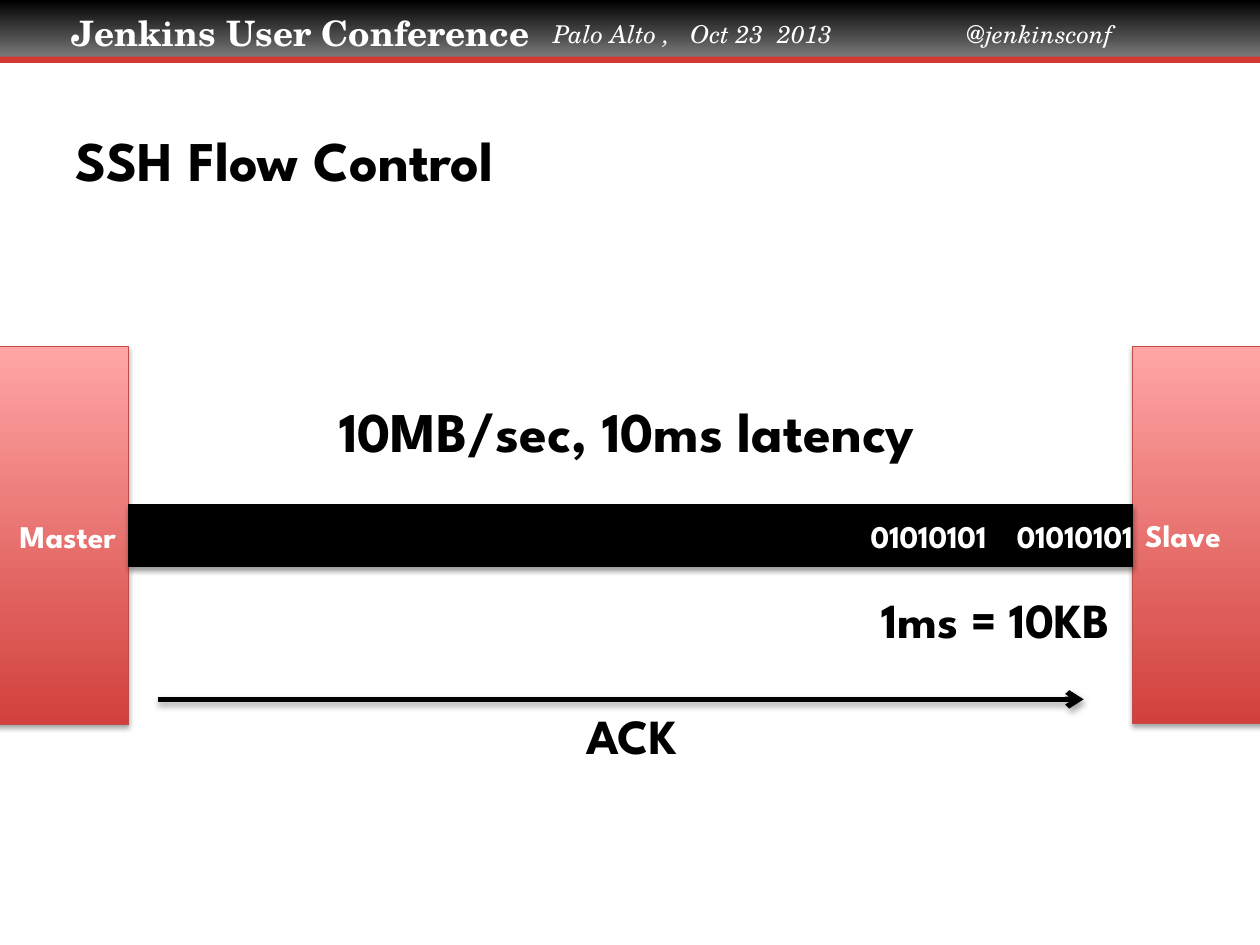
from lxml import etree
from pptx import Presentation
from pptx import util as u
from pptx.dml.color import RGBColor
from pptx.enum import shapes, text
from pptx.oxml import ns

COLORS = {"black": "000000", "grey": "808080", "white": "FFFFFF", "stripe": "D33833",
          "deep_red": "D1403C", "pale_red": "FFA6A5", "edge": "BF4C48"}
SPARTAN, SCHOLA = "League Spartan", "TeX Gyre Schola"
ALIGN = text.PP_ALIGN


def rgb(name):
    return RGBColor.from_string(COLORS[name])


def write(shape, words, size, color="black", font=SPARTAN, align=ALIGN.LEFT,
          anchor=text.MSO_ANCHOR.TOP, bold=True, italic=False, wrap=True, insets=None, tabs=()):
    frame = shape.text_frame
    frame.word_wrap = wrap
    frame.vertical_anchor = anchor
    if insets:
        (frame.margin_left, frame.margin_top,
         frame.margin_right, frame.margin_bottom) = map(u.Inches, insets)
    line = frame.paragraphs[0]
    line.text = words
    line.alignment = align
    if tabs:
        tab_list = etree.SubElement(line._p.get_or_add_pPr(), ns.qn("a:tabLst"))
        for stop in tabs:
            etree.SubElement(tab_list, ns.qn("a:tab"), pos=str(u.Inches(stop)), algn="l")
    line.font.name, line.font.size = font, u.Pt(size)
    line.font.bold, line.font.italic = bold, italic
    line.font.color.rgb = rgb(color)


deck = Presentation()
deck.slide_width, deck.slide_height = u.Inches(10), u.Inches(7.5)
slide = deck.slides.add_slide(deck.slide_layouts[6])
canvas = slide.shapes

# Bands: header, stripe, and the two machines (left, top, width, height, gradient, angle)
bands = [
    (0, 0, 10, 0.48, ("black", "grey"), 270),
    (0, 0.45, 10, 0.05, ("stripe",), None),
    (-1.98, 2.75, 3, 3, ("deep_red", "pale_red"), 90),
    (8.99, 2.75, 3, 2.99, ("deep_red", "pale_red"), 90),
]
drawn = []
for left, top, width, height, tones, angle in bands:
    band = canvas.add_shape(shapes.MSO_SHAPE.RECTANGLE, *map(u.Inches, (left, top, width, height)))
    band.shadow.inherit = False
    if angle is None:
        band.fill.solid()
        band.fill.fore_color.rgb = rgb(tones[0])
    else:
        band.fill.gradient()
        band.fill.gradient_angle = angle
        for stop, tone in zip(band.fill.gradient_stops, tones):
            stop.color.rgb = rgb(tone)
    band.line.fill.background()
    drawn.append(band)
header, stripe, master, slave = drawn

write(header, "Jenkins User Conference", 20, "white", SCHOLA, insets=(0.57, 0.09, 0.1, 0.05))
for machine, name, align in ((master, "Master", ALIGN.RIGHT), (slave, "Slave", ALIGN.LEFT)):
    machine.line.color.rgb = rgb("edge")
    machine.line.width = u.Pt(0.75)
    write(machine, name, 18, "white", align=align, anchor=text.MSO_ANCHOR.MIDDLE)

# Cable between the machines, and the ACK arrow grouped with its label
ack = canvas.add_group_shape()
links = []
for parent, start, end, y, width in ((canvas, 1.02, 8.99, 4.25, 36), (ack.shapes, 1.25, 8.6, 5.55, 3)):
    link = parent.add_connector(shapes.MSO_CONNECTOR.STRAIGHT, *map(u.Inches, (start, y, end, y)))
    link.line.color.rgb = rgb("black")
    link.line.width = u.Pt(width)
    etree.SubElement(link._element.spPr, ns.qn("a:effectLst"))
    links.append(link)
cable, ack_arrow = links
etree.SubElement(ack_arrow._element.spPr.find(ns.qn("a:ln")), ns.qn("a:tailEnd"), type="arrow")

# Soft shadows below machines and links
for part, opacity, distance in ((master, 35, 1.8), (slave, 35, 1.8), (cable, 38, 1.6), (ack_arrow, 35, 1.8)):
    effects = part._element.spPr.find(ns.qn("a:effectLst"))
    shadow = etree.SubElement(effects, ns.qn("a:outerShdw"), blurRad=str(u.Pt(3.1)),
                              dist=str(u.Pt(distance)), dir="5400000", rotWithShape="0")
    tone = etree.SubElement(shadow, ns.qn("a:srgbClr"), val=COLORS["black"])
    etree.SubElement(tone, ns.qn("a:alpha"), val=str(opacity * 1000))

# Free text (parent, box, words, size, options)
bits = dict(color="white", align=ALIGN.RIGHT, wrap=False, insets=(0, 0, 0, 0))
labels = [
    (canvas, (4.04, 0.1, 5.23, 0.34), "Palo Alto ,\tOct 23\t2013\t@jenkinsconf", 14,
     dict(color="white", font=SCHOLA, bold=False, italic=True,
          insets=(0.35, 0.05, 0.1, 0.05), tabs=(1.09, 1.78, 3.28))),
    (canvas, (0.5, 0.64, 9, 1.25), "SSH Flow Control", 32, dict(anchor=text.MSO_ANCHOR.MIDDLE)),
    (canvas, (1.98, 3.1, 6, 0.64), "10MB/sec, 10ms latency", 32, dict(align=ALIGN.CENTER)),
    (canvas, (7.85, 4.1, 1.14, 0.3), "01010101", 18, bits),
    (canvas, (6.69, 4.1, 1.14, 0.3), "01010101", 18, bits),
    (canvas, (6.2, 4.63, 2.71, 0.57), "1ms = 10KB", 28, dict(align=ALIGN.RIGHT)),
    (ack.shapes, (3.66, 5.55, 2.71, 0.57), "ACK", 28, dict(align=ALIGN.CENTER)),
]
for parent, box, words, size, options in labels:
    write(parent.add_textbox(*map(u.Inches, box)), words, size, **options)

deck.save("out.pptx")
